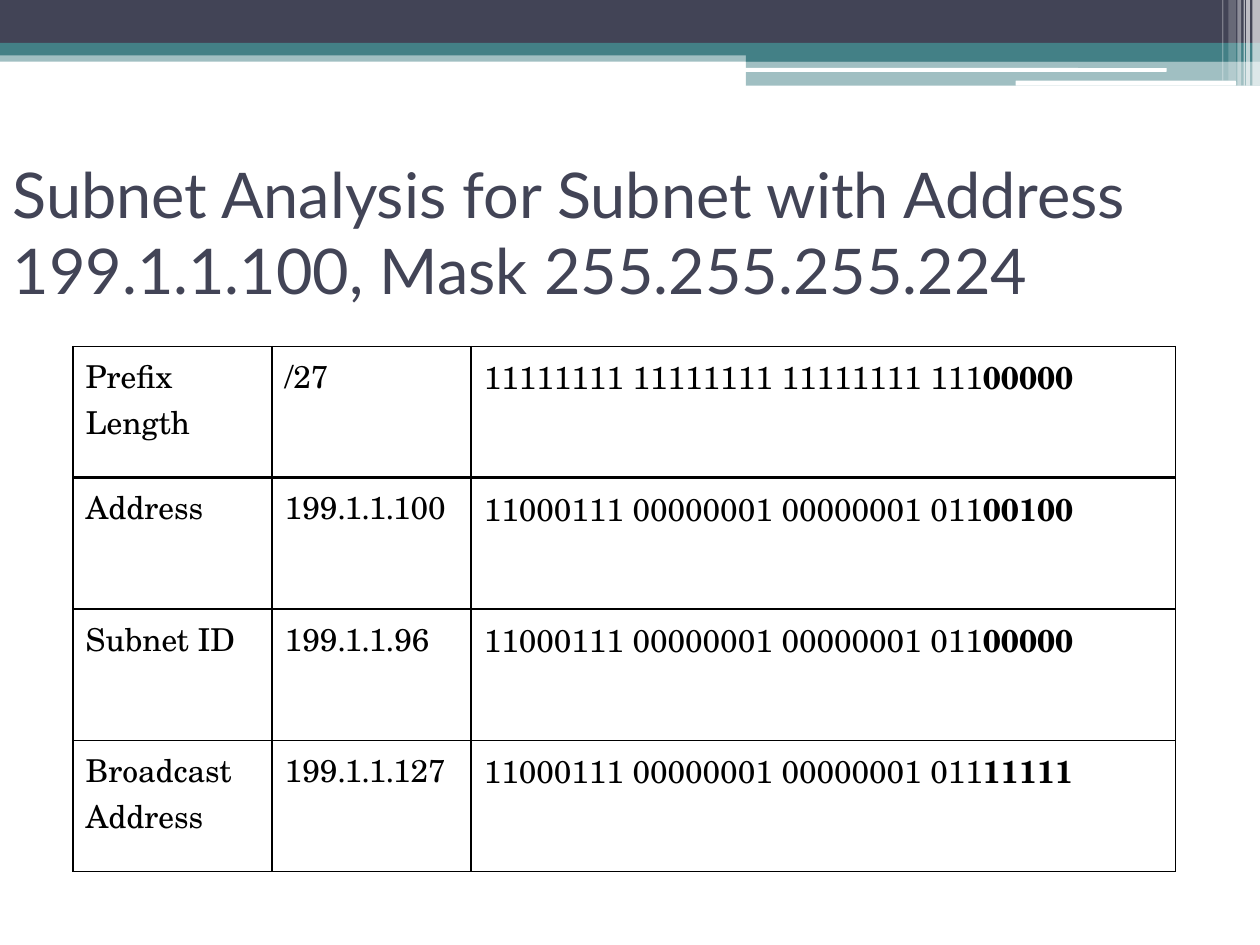
from lxml.etree import SubElement
from pptx import Presentation
from pptx.dml.color import RGBColor
from pptx.enum.shapes import MSO_SHAPE
from pptx.enum.text import MSO_ANCHOR, MSO_AUTO_SIZE, PP_ALIGN
from pptx.oxml.ns import qn
from pptx.util import Inches, Pt

THEME = {
    "dark": "424456", "teal": "438086", "white": "FFFFFF", "black": "000000",
    "title_font": "Lato", "title_size": 36,
    "table_font": "TeX Gyre Schola", "table_size": 18,
}


def add_text(para, text, *, font, size, color, bold=False):
    span = para.add_run()
    span.text = text
    span.font.name = THEME[font]
    span.font.size = Pt(THEME[size])
    span.font.bold = bold
    span.font.color.rgb = RGBColor.from_string(THEME[color])


def add_border(cell, side, points):
    line = SubElement(cell._tc.get_or_add_tcPr(), qn(f"a:ln{side}"), w=str(Pt(points)))
    fill = SubElement(line, qn("a:solidFill"))
    SubElement(fill, qn("a:srgbClr"), val=THEME["black"])


deck = Presentation()
deck.slide_width, deck.slide_height = Inches(10), Inches(7.5)
page = deck.slides.add_slide(deck.slide_layouts.get_by_name("Title Only"))

# Header bands, rounded cut-outs and edge stripes: left, top, width, height, colour, opacity %
bar, pill = MSO_SHAPE.RECTANGLE, MSO_SHAPE.ROUNDED_RECTANGLE
header = [
    (bar, 0, 0.4, 10, 0.09, "teal", 50),
    (bar, 0, 0, 10, 0.34, "dark", 100),
    (bar, 0, 0.34, 10, 0.1, "teal", 100),
    (bar, 5.92, 0.39, 4.08, 0.1, "teal", 100),
    (bar, 5.92, 0.48, 4.08, 0.2, "teal", 50),
    (pill, 5.91, 0.54, 3.35, 0.03, "white", 100),
    (pill, 8.06, 0.64, 1.75, 0.04, "white", 100),
]
stripes = [
    (9.94, 0.06, 0.68, 65), (9.89, 0.03, 0.68, 65), (9.87, 0.01, 0.68, 60),
    (9.82, 0.03, 0.68, 40), (9.75, 0.06, 0.64, 20), (9.7, 0.01, 0.64, 30),
]
header += [(bar, left, 0, width, height, "white", opacity)
           for left, width, height, opacity in stripes]
for kind, left, top, width, height, color, opacity in header:
    band = page.shapes.add_shape(
        kind, Inches(left), Inches(top), Inches(width), Inches(height))
    band.shadow.inherit = False
    band.line.fill.background()
    band.fill.solid()
    band.fill.fore_color.rgb = RGBColor.from_string(THEME[color])
    if opacity < 100:
        tint = band._element.spPr.find(f"{qn('a:solidFill')}/{qn('a:srgbClr')}")
        SubElement(tint, qn("a:alpha"), val=str(opacity * 1000))

# Title
title = page.shapes.title
title.left, title.top = Inches(0), Inches(1.25)
title.width, title.height = Inches(9.83), Inches(1.17)
frame = title.text_frame
frame.auto_size = MSO_AUTO_SIZE.NONE
frame.word_wrap = True
frame.vertical_anchor = MSO_ANCHOR.MIDDLE
frame.paragraphs[0].alignment = PP_ALIGN.LEFT
add_text(frame.paragraphs[0],
         "Subnet Analysis for Subnet with Address 199.1.1.100, Mask 255.255.255.224",
         font="title_font", size="title_size", color="dark")

# Subnet table: name, value, network bits, host bits (bold)
subnet_rows = [
    ("Prefix Length", "/27", "11111111 11111111 11111111 111", "00000"),
    ("Address", "199.1.1.100", "11000111 00000001 00000001 011", "00100"),
    ("Subnet ID", "199.1.1.96", "11000111 00000001 00000001 011", "00000"),
    ("Broadcast Address", "199.1.1.127", "11000111 00000001 00000001 011", "11111"),
]
column_widths = [1.58, 1.58, 5.59]
table = page.shapes.add_table(
    len(subnet_rows), len(column_widths),
    Inches(0.58), Inches(2.75), Inches(sum(column_widths)), Inches(4.17)).table
table.first_row = table.horz_banding = False
for column, width in zip(table.columns, column_widths):
    column.width = Inches(width)

for row, (name, value, network_bits, host_bits) in enumerate(subnet_rows):
    for column, text in enumerate((name, value, network_bits)):
        cell = table.cell(row, column)
        para = cell.text_frame.paragraphs[0]
        style = {"font": "table_font", "size": "table_size", "color": "black"}
        add_text(para, text, **style)
        if text == network_bits:
            add_text(para, host_bits, bold=True, **style)
        # The rule under the first row is heavier
        for side in "LRTB":
            heavy = (row, side) in ((0, "B"), (1, "T"))
            add_border(cell, side, 2 if heavy else 1)
        cell.fill.solid()
        cell.fill.fore_color.rgb = RGBColor.from_string(THEME["white"])

deck.save("out.pptx")
